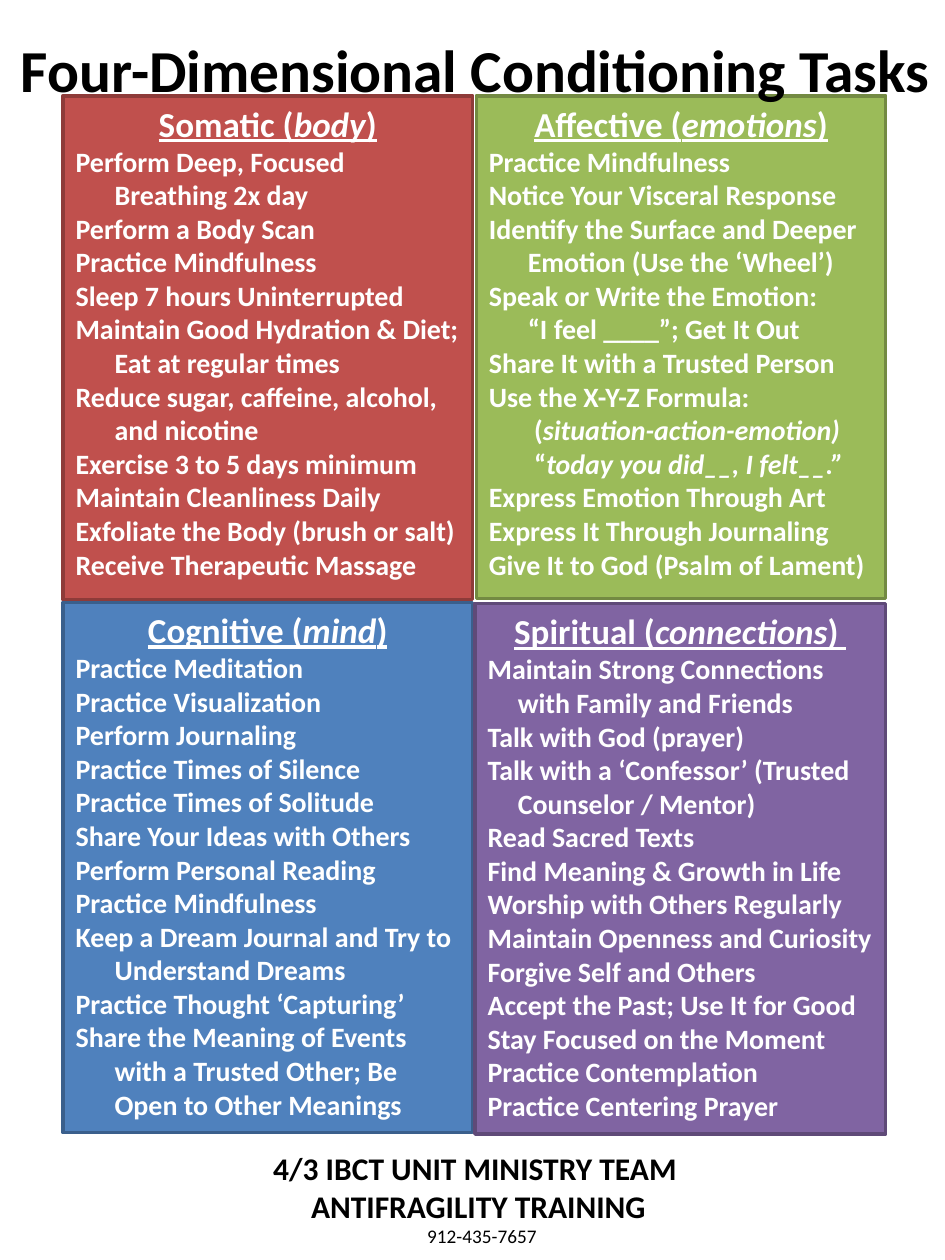
from lxml.etree import SubElement
from pptx import Presentation
from pptx.dml.color import RGBColor
from pptx.enum.text import MSO_ANCHOR, MSO_AUTO_SIZE, PP_ALIGN
from pptx.oxml.ns import qn
from pptx.util import Inches, Pt

FONT = "Calibri"
BLACK = RGBColor(0x00, 0x00, 0x00)
WHITE = RGBColor(0xFF, 0xFF, 0xFF)
RED, DARK_RED = RGBColor(0xC0, 0x50, 0x4D), RGBColor(0x8E, 0x3B, 0x39)
GREEN, DARK_GREEN = RGBColor(0x9B, 0xBB, 0x59), RGBColor(0x73, 0x8A, 0x42)
BLUE, DARK_BLUE = RGBColor(0x4F, 0x81, 0xBD), RGBColor(0x3A, 0x5F, 0x8C)
PURPLE, DARK_PURPLE = RGBColor(0x80, 0x64, 0xA2), RGBColor(0x5F, 0x4A, 0x78)

COMPARISON_LAYOUT = 4  # a title and four body placeholders
FORMULA_INDENT = 0.36

# In task lists, *stars* mark italics, \v a line break, and a leading > an indented line.
SOMATIC = [
    "Perform Deep, Focused Breathing 2x day",
    "Perform a Body Scan",
    "Practice Mindfulness",
    "Sleep 7 hours Uninterrupted",
    "Maintain Good Hydration & Diet; Eat at regular times",
    "Reduce sugar, caffeine, alcohol, and nicotine",
    "Exercise 3 to 5 days minimum",
    "Maintain Cleanliness Daily",
    "Exfoliate the Body (brush or salt)",
    "Receive Therapeutic Massage",
]
AFFECTIVE = [
    "Practice Mindfulness",
    "Notice Your Visceral Response",
    "Identify the Surface and Deeper Emotion (Use the ‘Wheel’)",
    "Speak or Write the Emotion:\v“I feel ____”; Get It Out",
    "Share It with a Trusted Person",
    "Use the X-Y-Z Formula:",
    ">(*situation-action-emotion)*",
    ">“*today you did__, I felt__.”*",
    "Express Emotion Through Art",
    "Express It Through Journaling",
    "Give It to God (Psalm of Lament)",
]
COGNITIVE = [
    "Practice Meditation",
    "Practice Visualization",
    "Perform Journaling",
    "Practice Times of Silence",
    "Practice Times of Solitude",
    "Share Your Ideas with Others",
    "Perform Personal Reading",
    "Practice Mindfulness",
    "Keep a Dream Journal and Try to Understand Dreams",
    "Practice Thought ‘Capturing’",
    "Share the Meaning of Events with a Trusted Other; Be Open to Other Meanings",
]
SPIRITUAL = [
    "Maintain Strong Connections with Family and Friends",
    "Talk with God (prayer)",
    "Talk with a ‘Confessor’ (Trusted Counselor / Mentor)",
    "Read Sacred Texts",
    "Find Meaning & Growth in Life",
    "Worship with Others Regularly",
    "Maintain Openness and Curiosity",
    "Forgive Self and Others",
    "Accept the Past; Use It for Good",
    "Stay Focused on the Moment",
    "Practice Contemplation",
    "Practice Centering Prayer",
]

# heading, tasks, hanging indent, fill, line, box (left, top, width, height)
PANELS = [
    ("Somatic (*body*)", SOMATIC, 0.31, RED, DARK_RED, (0.5, 0.76, 3.25, 4)),
    ("Affective (*emotions*)", AFFECTIVE, 0.31, GREEN, DARK_GREEN, (3.78, 0.76, 3.25, 3.99)),
    ("Cognitive (*mind*)", COGNITIVE, 0.31, BLUE, DARK_BLUE, (0.5, 4.78, 3.25, 4.21)),
    ("Spiritual (*connections*) ", SPIRITUAL, 0.24, PURPLE, DARK_PURPLE, (3.77, 4.79, 3.26, 4.21)),
]


def place(shape, box, wrap=True):
    """Move a text shape to its box and fix its frame."""
    shape.left, shape.top, shape.width, shape.height = map(Inches, box)
    frame = shape.text_frame
    frame.word_wrap = wrap
    frame.auto_size = MSO_AUTO_SIZE.NONE
    frame.vertical_anchor = MSO_ANCHOR.TOP
    return frame


def style(para, size, color, bold=True, align=PP_ALIGN.LEFT):
    para.alignment = align
    para.space_before = Pt(0)
    font = para.font
    font.name, font.size, font.bold = FONT, Pt(size), bold
    font.color.rgb = color


def add_spans(para, text):
    """Add text, with the parts between stars in italics."""
    for index, part in enumerate(text.split("*")):
        for row, line in enumerate(part.split("\v")):
            if row:
                para.add_line_break()
            if line:
                span = para.add_run()
                span.text = line
                if index % 2:
                    span.font.italic = True


def indent(para, left, first):
    """Set the indents of a paragraph without a bullet."""
    properties = para._p.get_or_add_pPr()
    properties.set("marL", str(Inches(left)))
    properties.set("indent", str(Inches(first)))
    SubElement(properties, qn("a:buNone"))


def fill_panel(body, heading, tasks, hang, fill, line, box):
    frame = place(body, box)
    body.fill.solid()
    body.fill.fore_color.rgb = fill
    body.line.color.rgb = line
    body.line.width = Pt(2)

    para = frame.paragraphs[0]
    indent(para, 0, 0)
    style(para, 20, WHITE, align=PP_ALIGN.CENTER)
    para.font.underline = True
    add_spans(para, heading)

    for task in tasks:
        para = frame.add_paragraph()
        if task.startswith(">"):
            indent(para, FORMULA_INDENT, 0)
        else:
            indent(para, hang, -hang)
        style(para, 16, WHITE)
        add_spans(para, task.lstrip(">"))


def fill_title(title, box):
    para = place(title, box, wrap=False).paragraphs[0]
    para.text = "Four-Dimensional Conditioning Tasks"
    style(para, 34, BLACK, align=PP_ALIGN.CENTER)


def add_footer(page, box):
    frame = place(page.shapes.add_textbox(0, 0, 0, 0), box)
    frame.text = "4/3 IBCT UNIT MINISTRY TEAM\nANTIFRAGILITY TRAINING \n912-435-7657"
    team, training, phone = frame.paragraphs
    style(team, 18, BLACK)
    style(training, 18, BLACK, align=PP_ALIGN.CENTER)
    style(phone, 11, BLACK, bold=False, align=PP_ALIGN.CENTER)


def main():
    deck = Presentation()
    deck.slide_width, deck.slide_height = Inches(7.5), Inches(10)
    page = deck.slides.add_slide(deck.slide_layouts[COMPARISON_LAYOUT])
    title, *bodies = page.placeholders
    for body, panel in zip(bodies, PANELS):
        fill_panel(body, *panel)
    fill_title(title, (0.02, 0.21, 7.5, 0.67))
    page.shapes._spTree.append(title._element)  # the title overlaps the panels
    add_footer(page, (2.07, 9.07, 3.51, 0.89))
    deck.save("out.pptx")


if __name__ == "__main__":
    main()
